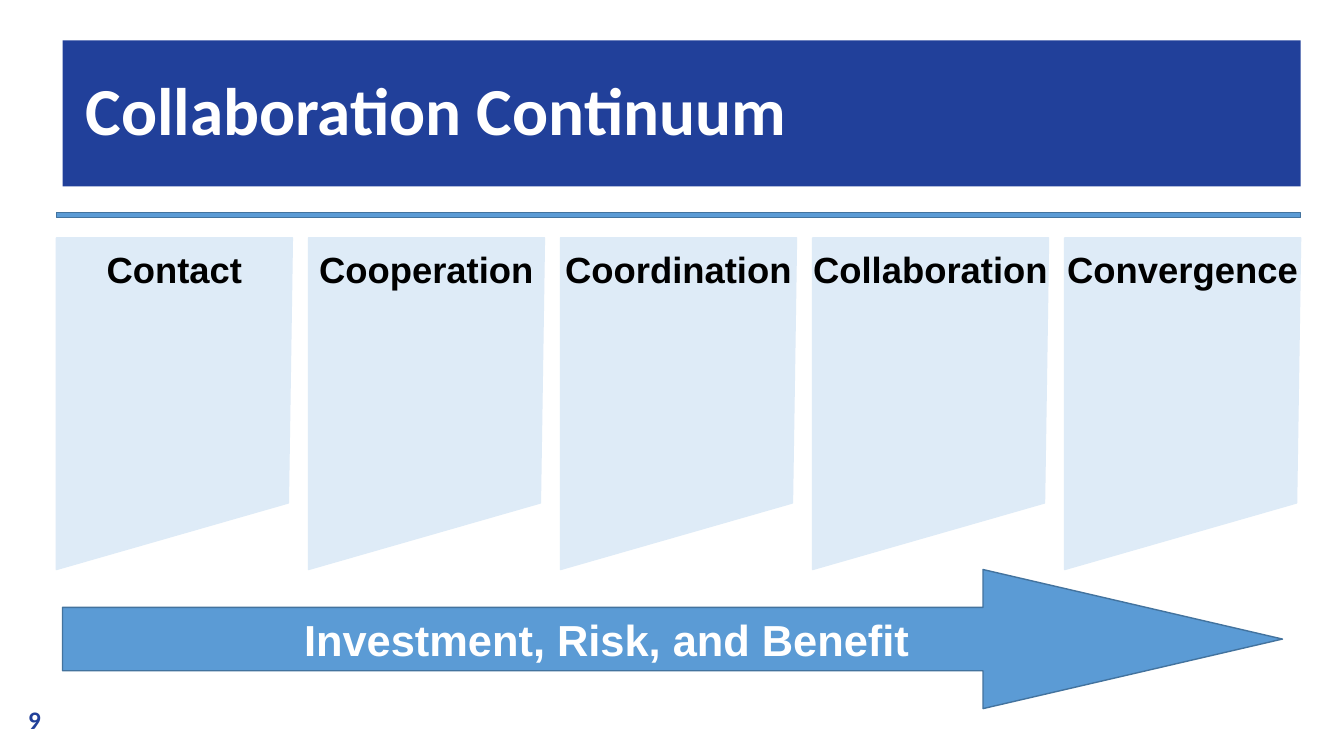
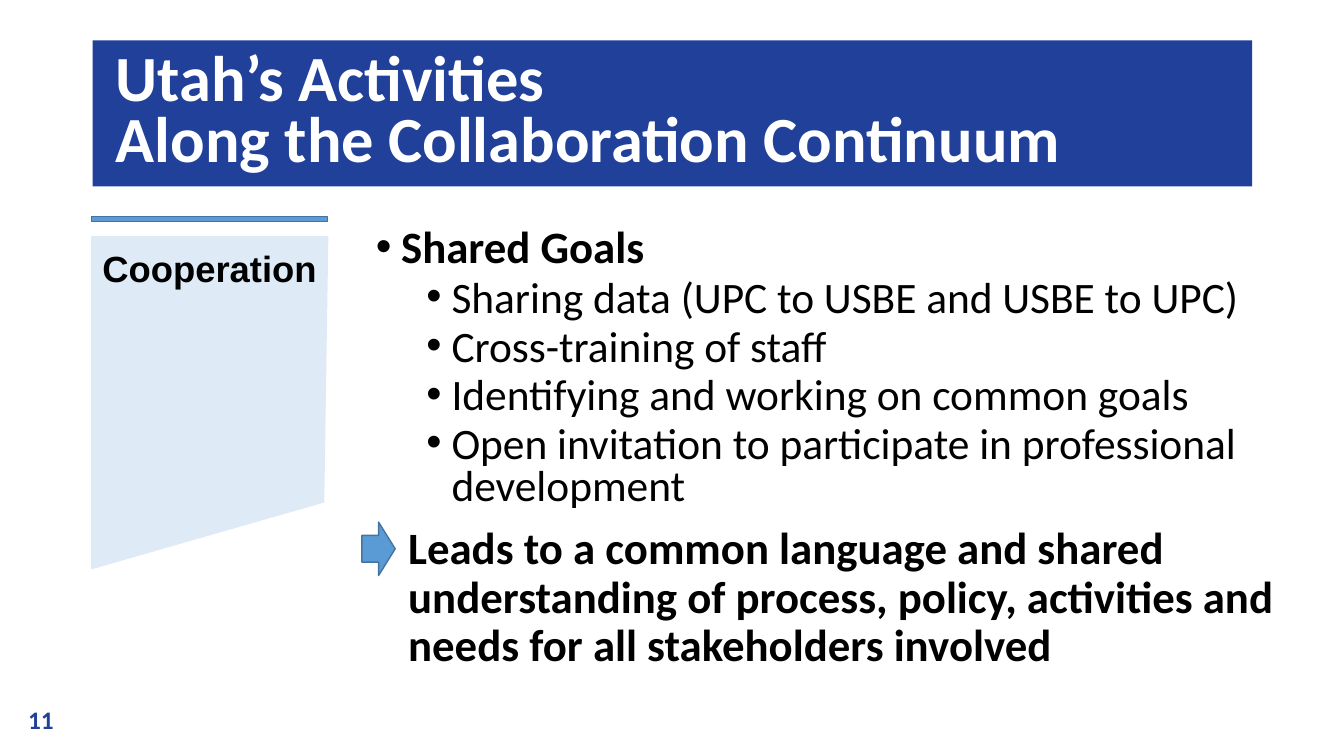
from lxml import etree
from pptx import Presentation
from pptx import util as u
from pptx.dml.color import RGBColor
from pptx.enum import shapes, text
from pptx.oxml.ns import qn

NAVY, BLUE, EDGE, PALE = "21409A", "5B9BD5", "43739E", "DEEBF7"
WHITE, BLACK = "FFFFFF", "000000"
STAGES = ["Contact", "Cooperation", "Coordination", "Collaboration", "Convergence"]
GOALS = [
    "Sharing data (UPC to USBE and USBE to UPC)",
    "Cross-training of staff",
    "Identifying and working on common goals",
    "Open invitation to participate in professional development",
]
OUTCOME = ("Leads to a common language and shared understanding of process, "
           "policy, activities and needs for all stakeholders involved")


def rgb(value):
    """Return the colour for a hex string."""
    return RGBColor.from_string(value)


def inches(*values):
    """Convert several lengths in inches."""
    return [u.Inches(v) for v in values]


def paint(sp, fill, line=None):
    """Give a shape a flat fill and an optional outline."""
    sp.shadow.inherit = False
    sp.fill.solid()
    sp.fill.fore_color.rgb = rgb(fill)
    if line:
        sp.line.color.rgb = rgb(line)
        sp.line.width = u.Pt(1)
    else:
        sp.line.fill.background()
    return sp


def add_shape(s, kind, box, fill, line=None):
    """Add a painted preset shape."""
    return paint(s.shapes.add_shape(kind, *inches(*box)), fill, line)


def frame(sp, anchor=text.MSO_ANCHOR.TOP, side=0.1):
    """Set wrapping, anchor and side insets of a text frame."""
    tf = sp.text_frame
    tf.word_wrap = True
    tf.vertical_anchor = anchor
    tf.margin_left = tf.margin_right = u.Inches(side)
    return tf


def write(p, content, size, color=BLACK, font="Calibri", bold=True,
          align=text.PP_ALIGN.LEFT, spacing=None, before=0, left=0, bullet=False):
    """Fill a paragraph with formatted text."""
    p.alignment = align
    p.line_spacing = spacing
    p.space_before = u.Pt(before)
    pPr = p._p.get_or_add_pPr()
    pPr.set("marL", str(u.Inches(left)))
    pPr.set("indent", str(u.Inches(-0.25 if bullet else 0)))
    if bullet:
        etree.SubElement(pPr, qn("a:buFont")).set("typeface", "Arial")
        etree.SubElement(pPr, qn("a:buChar")).set("char", "•")
    for i, part in enumerate(content.split("\n")):
        if i:
            p.add_line_break()
        r = p.add_run()
        r.text = part
        r.font.size = u.Pt(size)
        r.font.name = font
        r.font.bold = bold
        r.font.color.rgb = rgb(color)


def add_label(s, box, content, size, side=0.1, **fmt):
    """Add a centred Arial label."""
    tf = frame(s.shapes.add_textbox(*inches(*box)), side=side)
    write(tf.paragraphs[0], content, size, font="Arial",
          align=text.PP_ALIGN.CENTER, **fmt)


def add_slide(prs, title, number, left, width, size, spacing):
    """Add a slide with its title band and page number."""
    s = prs.slides.add_slide(prs.slide_layouts[6])
    band = add_shape(s, shapes.MSO_SHAPE.RECTANGLE, (left, 0.4, width, 1.45), NAVY)
    write(frame(band, text.MSO_ANCHOR.MIDDLE).paragraphs[0], title, size,
          WHITE, spacing=spacing, left=0.13)
    page = s.shapes.add_textbox(*inches(0.18, 6.94, 3, 0.4))
    write(frame(page, text.MSO_ANCHOR.MIDDLE).paragraphs[0], str(number), 18, NAVY)
    return s


def add_rule(s, left, top, width):
    """Add the thin bar above the stage panels."""
    add_shape(s, shapes.MSO_SHAPE.RECTANGLE, (left, top, width, 0.05), BLUE, EDGE)


def add_stage(s, left, top, name):
    """Add a slanted stage panel with its name."""
    width, height, slant = 2.34, 3.29, 0.66
    fb = s.shapes.build_freeform(*inches(left, top))
    corners = [(width, 0), (width - 0.04, height - slant), (0, height)]
    fb.add_line_segments([inches(left + x, top + y) for x, y in corners], close=True)
    paint(fb.convert_to_shape(), PALE, PALE)
    add_label(s, (left - 0.1, top + 0.04, 2.54, 0.54), name, 26, side=0)


def add_investment_arrow(s, left, top, width, height):
    """Add the long arrow with its caption."""
    arrow = add_shape(s, shapes.MSO_SHAPE.RIGHT_ARROW,
                      (left, top, width, height), BLUE, EDGE)
    arrow.adjustments[0], arrow.adjustments[1] = 0.456, 2.152
    add_label(s, (left + 1.96, top + 0.38, 6.87, 0.62),
              "Investment, Risk, and Benefit", 31, color=WHITE)


def add_goals(s, left, top, width, height):
    """Add the bulleted goals and the outcome with its arrow."""
    tf = frame(s.shapes.add_textbox(*inches(left, top, width, height)))
    write(tf.paragraphs[0], "Shared Goals", 32, spacing=0.9, before=5,
          left=0.25, bullet=True)
    for goal in GOALS:
        write(tf.add_paragraph(), goal, 31, bold=False, spacing=0.8, before=5,
              left=0.75, bullet=True)
    write(tf.add_paragraph(), OUTCOME, 32, spacing=0.9, before=12, left=0.32)
    add_shape(s, shapes.MSO_SHAPE.RIGHT_ARROW,
              (left - 0.04, top + 3, 0.33, 0.53), BLUE, EDGE)


def continuum_slide(prs):
    """Build the slide with all five stages."""
    s = add_slide(prs, "Collaboration Continuum", 9, 0.62, 12.28, 48, 0.9)
    add_rule(s, 0.56, 2.11, 12.34)
    for i, name in enumerate(STAGES):
        add_stage(s, 0.56 + 2.5 * i, 2.36, name)
    add_investment_arrow(s, 0.62, 5.65, 12.1, 1.38)


def activities_slide(prs):
    """Build the slide on the activities of one stage."""
    s = add_slide(prs, "Utah’s Activities\nAlong the Collaboration Continuum",
                  11, 0.92, 11.5, 46, 0.8)
    add_stage(s, 0.91, 2.35, STAGES[1])
    add_rule(s, 0.91, 2.15, 2.34)
    add_goals(s, 3.63, 2.18, 9.18, 5.16)


def main():
    """Build and save the presentation."""
    prs = Presentation()
    prs.slide_width, prs.slide_height = inches(13.33, 7.5)
    continuum_slide(prs)
    activities_slide(prs)
    prs.save("out.pptx")


if __name__ == "__main__":
    main()
